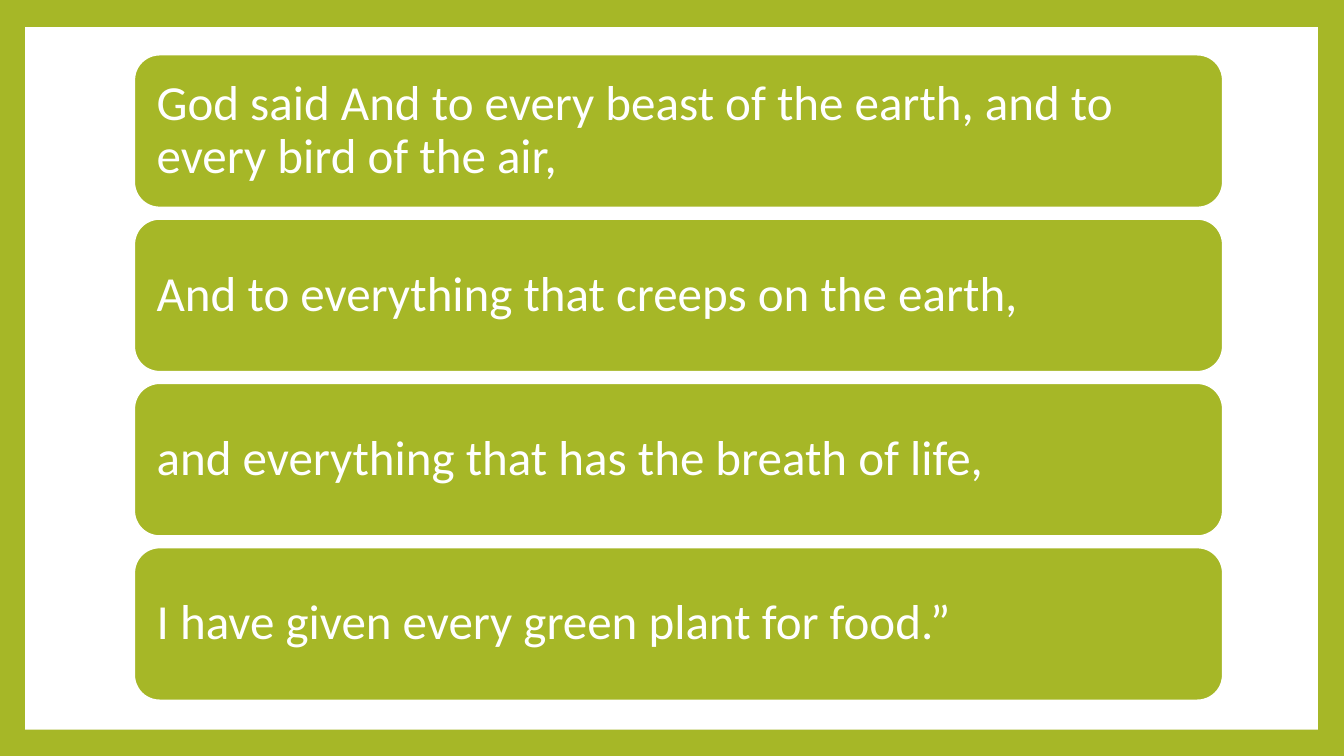
from dataclasses import dataclass

from pptx import Presentation
from pptx.dml.color import RGBColor
from pptx.enum.shapes import MSO_SHAPE
from pptx.enum.text import MSO_ANCHOR, PP_ALIGN
from pptx.util import Inches, Pt

RECTANGLE = MSO_SHAPE.RECTANGLE
ROUNDED_RECTANGLE = MSO_SHAPE.ROUNDED_RECTANGLE
MIDDLE = MSO_ANCHOR.MIDDLE
LEFT = PP_ALIGN.LEFT


@dataclass(frozen=True)
class Theme:
    green: RGBColor = RGBColor(0xA6, 0xB7, 0x27)
    white: RGBColor = RGBColor(0xFF, 0xFF, 0xFF)
    font: str = "Calibri"
    verse_size: Pt = Pt(35)
    outline: Pt = Pt(1.5)


THEME = Theme()

VERSES = [
    "God said And to every beast of the earth, and to every bird of the air,",
    "And to everything that creeps on the earth,",
    "and everything that has the breath of life,",
    "I have given every green plant for food.”",
]
FIRST_TOP = 0.54
VERSE_PITCH = 1.63


def set_background(slide, color):
    fill = slide.background.fill
    fill.solid()
    fill.fore_color.rgb = color


def add_filled_shape(slide, kind, left, top, width, height, color):
    shape = slide.shapes.add_shape(
        kind, Inches(left), Inches(top), Inches(width), Inches(height)
    )
    shape.shadow.inherit = False
    shape.fill.solid()
    shape.fill.fore_color.rgb = color
    shape.line.fill.background()
    return shape


def add_verse(slide, top, text):
    shape = add_filled_shape(
        slide, ROUNDED_RECTANGLE, 1.33, top, 10.8, 1.52, THEME.green
    )
    shape.line.color.rgb = THEME.white
    shape.line.width = THEME.outline

    frame = shape.text_frame
    frame.text = text
    frame.word_wrap = True
    frame.vertical_anchor = MIDDLE
    frame.margin_left = frame.margin_right = Inches(0.15)
    frame.margin_top = frame.margin_bottom = Inches(0.15)

    paragraph = frame.paragraphs[0]
    paragraph.alignment = LEFT
    paragraph.line_spacing = 0.9
    font = paragraph.runs[0].font
    font.name = THEME.font
    font.size = THEME.verse_size
    font.color.rgb = THEME.white


def main():
    presentation = Presentation()
    presentation.slide_width = Inches(13.33)
    presentation.slide_height = Inches(7.5)
    slide = presentation.slides.add_slide(presentation.slide_layouts[6])

    set_background(slide, THEME.green)
    add_filled_shape(slide, RECTANGLE, 0.25, 0.27, 12.82, 6.97, THEME.white)
    for index, verse in enumerate(VERSES):
        add_verse(slide, FIRST_TOP + index * VERSE_PITCH, verse)

    presentation.save("out.pptx")


if __name__ == "__main__":
    main()
